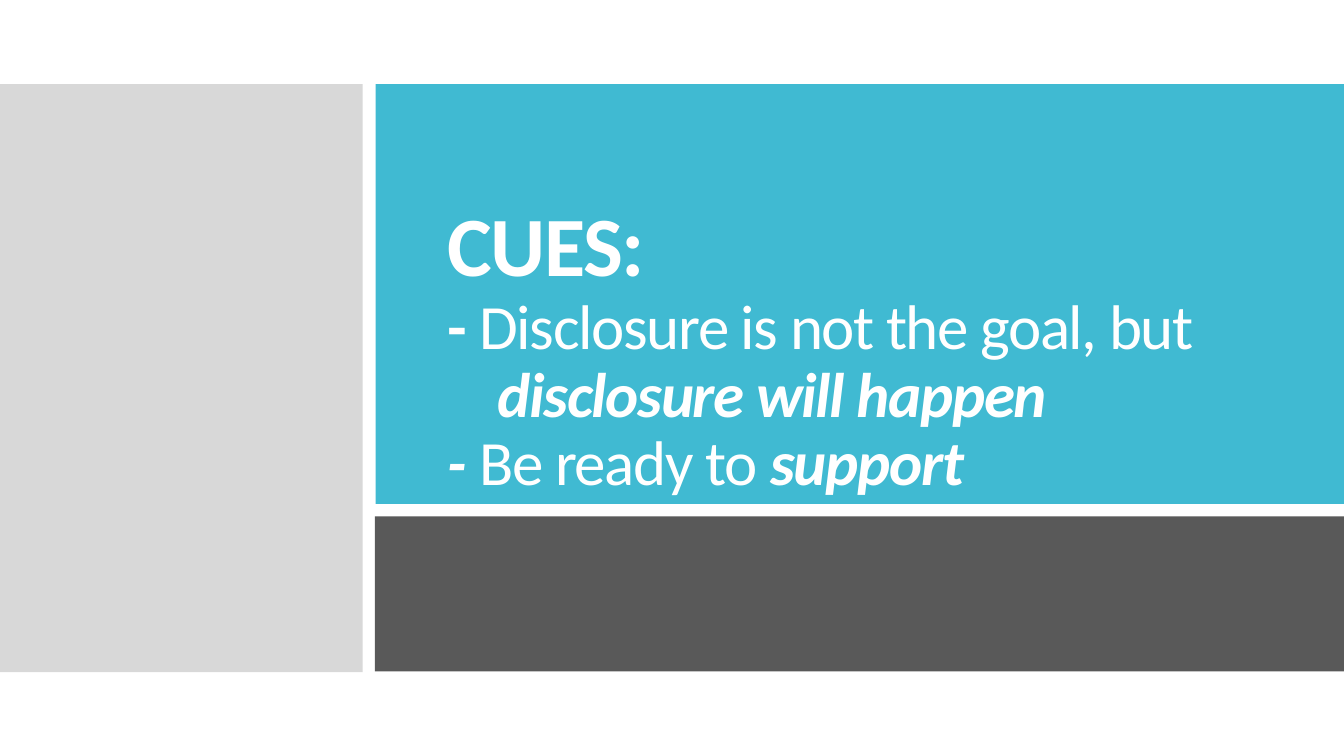
from pptx import Presentation
from pptx.dml.color import RGBColor
from pptx.enum.shapes import MSO_SHAPE
from pptx.enum.text import MSO_ANCHOR, MSO_AUTO_SIZE, PP_ALIGN
from pptx.util import Cm, Pt

COLORS = {"teal": "40BAD2", "light": "D8D8D8", "dark": "595959", "white": "FFFFFF"}
FONT = "Calibri"

# Each line holds runs of (text, size, bold, italic)
LINES = [
    [("CUES:", 60.3, True, False)],
    [("- ", 45, True, False), ("Disclosure is not the goal, but", 45, False, False)],
    [("\t", 45, False, False), ("disclosure will happen", 45, True, True)],
    [("- ", 45, True, True), ("Be ready to ", 45, False, False),
     ("support", 45, True, True)],
]

# Left, top, width, height in cm
PANELS = [
    ("light", (0, 2.12, 9.14, 14.82)),
    ("teal", (9.47, 2.12, 24.4, 10.58)),
    ("dark", (9.45, 13.01, 24.42, 3.91)),
]
TITLE = (11.02, 3.61, 21.44, 9.09)


def tint(name):
    return RGBColor.from_string(COLORS[name])


def add_panel(slide, color, box):
    panel = slide.shapes.add_shape(MSO_SHAPE.RECTANGLE, *map(Cm, box))
    panel.shadow.inherit = False
    panel.fill.solid()
    panel.fill.fore_color.rgb = tint(color)
    panel.line.fill.background()


def add_run(para, text, size, bold, italic):
    run = para.add_run()
    run.text = text
    font = run.font
    font.name, font.size = FONT, Pt(size)
    font.bold, font.italic = bold, italic
    font.color.rgb = tint("white")
    run._r.get_or_add_rPr().set("spc", "-100")


def fill_title(slide):
    title = slide.shapes.title
    title.left, title.top, title.width, title.height = map(Cm, TITLE)
    slide.shapes._spTree.append(title._element)  # bring in front of the panels
    frame = title.text_frame
    frame.word_wrap = True
    frame.auto_size = MSO_AUTO_SIZE.NONE
    frame.vertical_anchor = MSO_ANCHOR.BOTTOM
    para = frame.paragraphs[0]
    para.alignment = PP_ALIGN.LEFT
    para.line_spacing = 0.9
    for row, line in enumerate(LINES):
        if row:
            para.add_line_break()
        for run in line:
            add_run(para, *run)


def main():
    deck = Presentation()
    deck.slide_width, deck.slide_height = Cm(33.87), Cm(19.05)
    slide = deck.slides.add_slide(deck.slide_layouts[5])
    for color, box in PANELS:
        add_panel(slide, color, box)
    fill_title(slide)
    deck.save("out.pptx")


if __name__ == "__main__":
    main()
